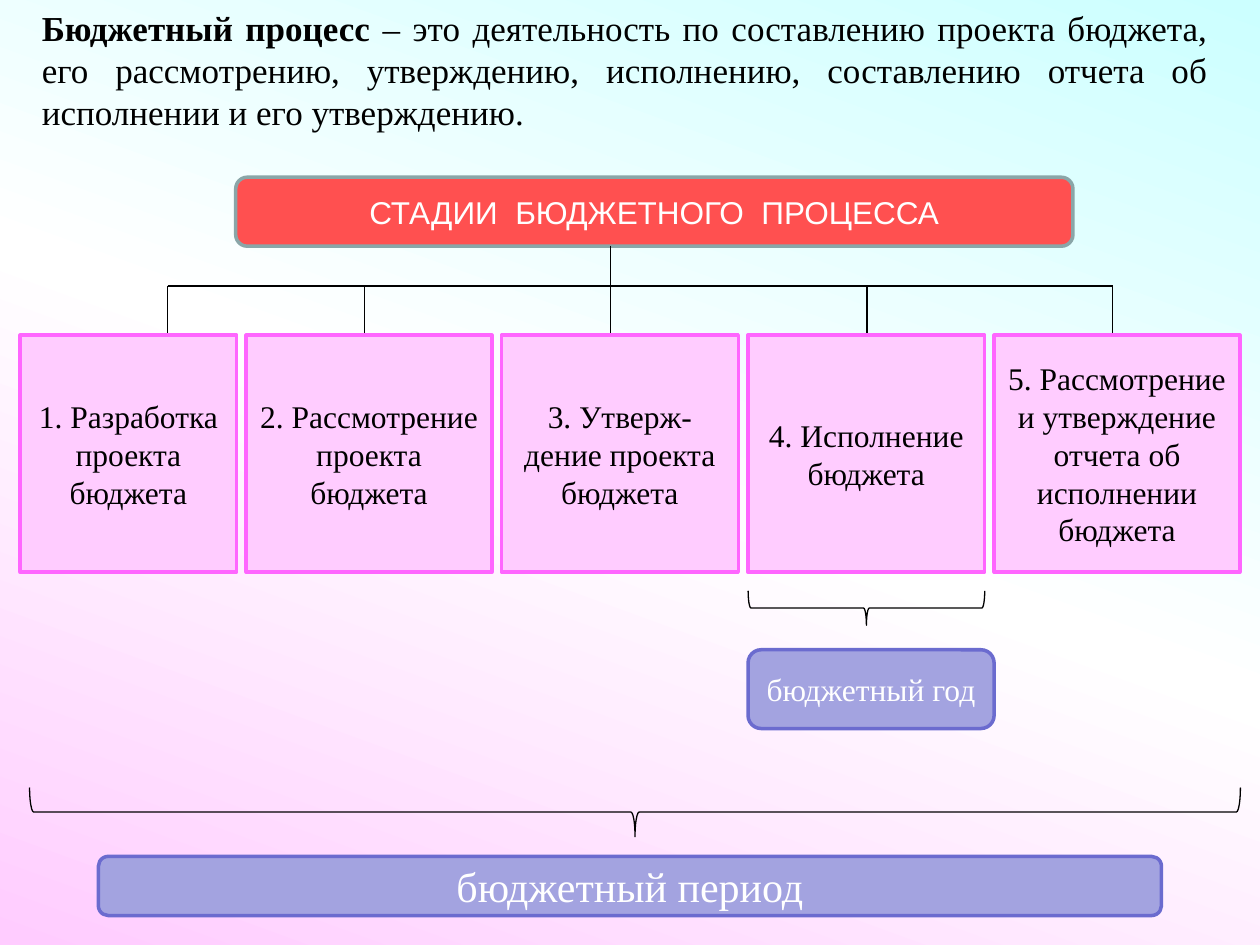
"""Build a slide on the stages of the budget process."""
import copy

import pptx
import pptx.dml.color
import pptx.enum.shapes
import pptx.enum.text
import pptx.oxml
import pptx.util

Pt = pptx.util.Pt
SHAPES = pptx.enum.shapes.MSO_SHAPE
ALIGN = pptx.enum.text.PP_ALIGN
SERIF = "Times New Roman"

BACKGROUND = [(0, "CCFFFF"), (0.5, "FFFFFF"), (1, "FFCCFF")]
BACKGROUND_ANGLE = 250
DEFINITION = [
    ("Бюджетный процесс ", True),
    ("– это деятельность по составлению проекта бюджета, его рассмотрению, "
     "утверждению, исполнению, составлению отчета об исполнении и его утверждению.", False),
]
STAGES = [
    ("1. Разработка проекта бюджета", 123.8, 95.8),
    ("2. Рассмотрение проекта бюджета", 140.4, 208.1),
    ("3. Утверж-дение проекта бюджета", 135.4, 348.8),
    ("4. Исполнение бюджета", 135.4, 495.4),
    ("5. Рассмотрение и утверждение отчета об исполнении бюджета", 140.4, 635.8),
]
STAGE_LEFT, STAGE_TOP, STAGE_HEIGHT, STAGE_GAP = 11.5, 191.5, 135.4, 5.4
BUS_TOP, TRUNK_TOP, TRUNK_BOTTOM = 163.4, 140.4, 168.5

HEADING_STYLE = {"kind": SHAPES.ROUNDED_RECTANGLE, "fill": "FF5050", "line": "8AA6A8",
                 "font": {"name": "Arial", "size": Pt(18)}, "color": "FFFFFF"}
STAGE_STYLE = {"kind": SHAPES.RECTANGLE, "fill": "FFCCFF", "line": "FF66FF",
               "font": {"name": SERIF, "size": Pt(18)}, "color": "000000"}
YEAR_STYLE = {"kind": SHAPES.ROUNDED_RECTANGLE, "fill": "A3A3E0", "line": "6B6BCF",
              "font": {"name": SERIF, "size": Pt(18)}, "color": "FFFFFF"}
PERIOD_STYLE = {**YEAR_STYLE, "font": {"name": SERIF, "size": Pt(24)}}

BOXES = [
    ("СТАДИИ  БЮДЖЕТНОГО  ПРОЦЕССА", (134.7, 101.3, 478.4, 39.4), HEADING_STYLE),
    ("бюджетный год", (427.5, 371.3, 140.6, 45), YEAR_STYLE),
    ("бюджетный период", (56.2, 489.4, 607.5, 33.8), PERIOD_STYLE),
]
BRACES = [(427.5, 337.6, 135.2, 19.7), (16.9, 450, 691.9, 28.1)]


def rgb(color):
    return pptx.dml.color.RGBColor.from_string(color)


def set_line(item, color, width):
    item.line.color.rgb = rgb(color)
    item.line.width = Pt(width)


def add_run(paragraph, text, color, font):
    run = paragraph.add_run()
    run.text = text
    run.font.color.rgb = rgb(color)
    for name, value in font.items():
        setattr(run.font, name, value)


def paint_background(slide):
    fill = slide.background.fill
    fill.gradient()
    fill.gradient_angle = BACKGROUND_ANGLE
    stops = slide.background._cSld.find(".//" + pptx.oxml.ns.qn("a:gsLst"))
    stops.append(copy.deepcopy(stops[0]))
    for stop, (position, color) in zip(fill.gradient_stops, BACKGROUND):
        stop.color.rgb = rgb(color)
        stop.position = position


def add_definition(slide):
    frame = slide.shapes.add_textbox(*map(Pt, (16.8, 0, 680.4, 80))).text_frame
    frame.word_wrap = True
    frame.auto_size = pptx.enum.text.MSO_AUTO_SIZE.SHAPE_TO_FIT_TEXT
    paragraph = frame.paragraphs[0]
    paragraph.alignment = ALIGN.JUSTIFY
    for text, bold in DEFINITION:
        add_run(paragraph, text, "000000", {"name": SERIF, "size": Pt(20), "bold": bold})


def add_box(slide, text, bounds, style):
    shape = slide.shapes.add_shape(style["kind"], *map(Pt, bounds))
    shape.shadow.inherit = False
    shape.fill.solid()
    shape.fill.fore_color.rgb = rgb(style["fill"])
    set_line(shape, style["line"], 2)
    frame = shape.text_frame
    frame.word_wrap = True
    frame.vertical_anchor = pptx.enum.text.MSO_ANCHOR.MIDDLE
    paragraph = frame.paragraphs[0]
    paragraph.alignment = ALIGN.CENTER
    add_run(paragraph, text, style["color"], style["font"])


def add_line(slide, *ends):
    connector = slide.shapes.add_connector(
        pptx.enum.shapes.MSO_CONNECTOR.STRAIGHT, *map(Pt, ends))
    set_line(connector, "000000", 0.75)
    properties = connector._element.spPr
    properties.append(pptx.oxml.xmlchemy.OxmlElement("a:effectLst"))


def add_brace(slide, left, top, width, height):
    shift = (width - height) / 2
    bounds = (left + shift, top - shift, height, width)
    shape = slide.shapes.add_shape(SHAPES.RIGHT_BRACE, *map(Pt, bounds))
    shape.rotation = 90
    shape.shadow.inherit = False
    shape.fill.background()
    set_line(shape, "000000", 0.75)


def main():
    presentation = pptx.Presentation()
    presentation.slide_width, presentation.slide_height = Pt(720), Pt(540)
    slide = presentation.slides.add_slide(presentation.slide_layouts[6])
    paint_background(slide)
    add_definition(slide)
    stems = [stem for _, _, stem in STAGES]
    for stem in stems:
        add_line(slide, stem, BUS_TOP, stem, STAGE_TOP)
    add_line(slide, stems[0], BUS_TOP, stems[-1], BUS_TOP)
    left = STAGE_LEFT
    for text, width, _ in STAGES:
        add_box(slide, text, (left, STAGE_TOP, width, STAGE_HEIGHT), STAGE_STYLE)
        left += width + STAGE_GAP
    for text, bounds, style in BOXES:
        add_box(slide, text, bounds, style)
    for bounds in BRACES:
        add_brace(slide, *bounds)
    add_line(slide, stems[2], TRUNK_TOP, stems[2], TRUNK_BOTTOM)
    presentation.save("out.pptx")


if __name__ == "__main__":
    main()
